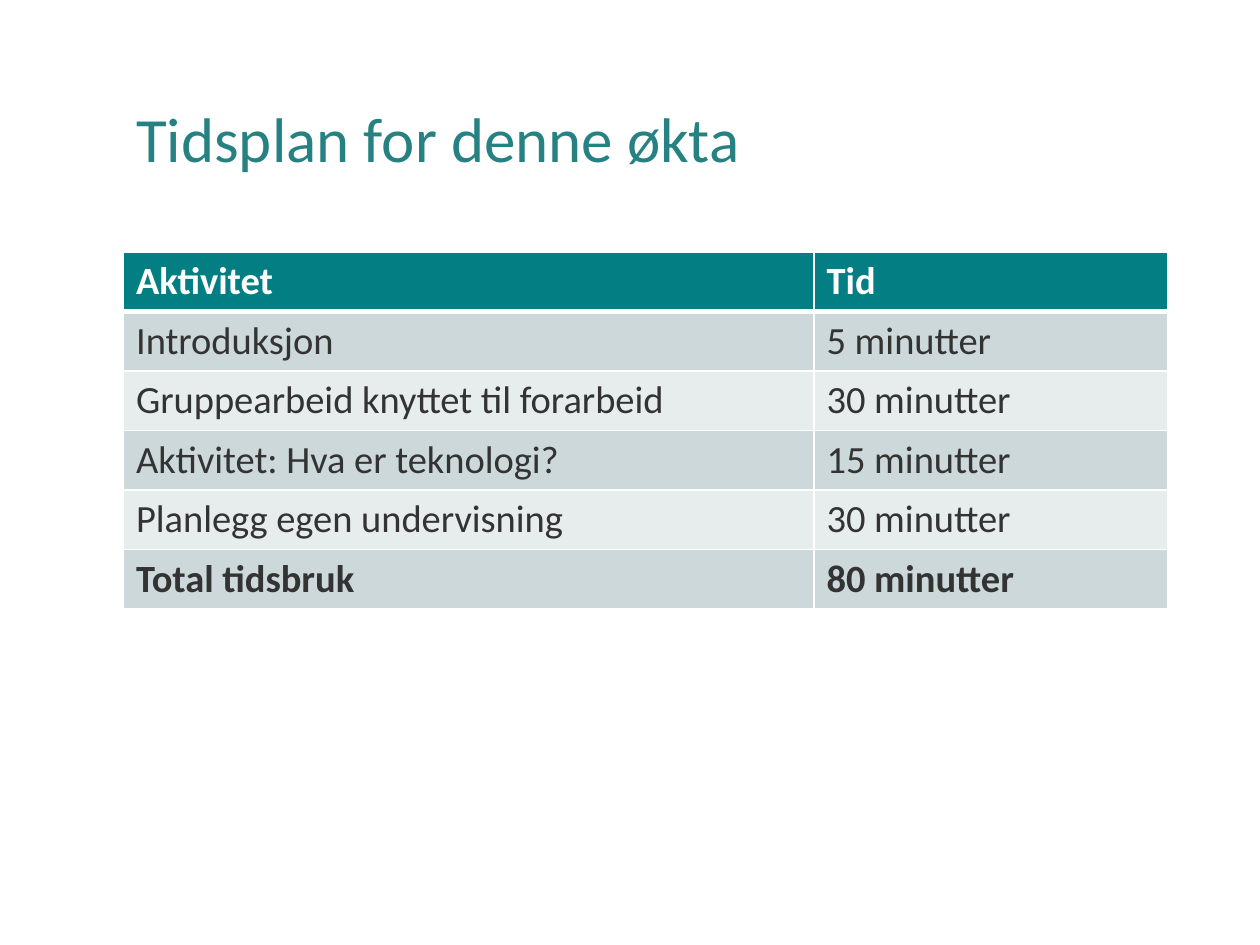
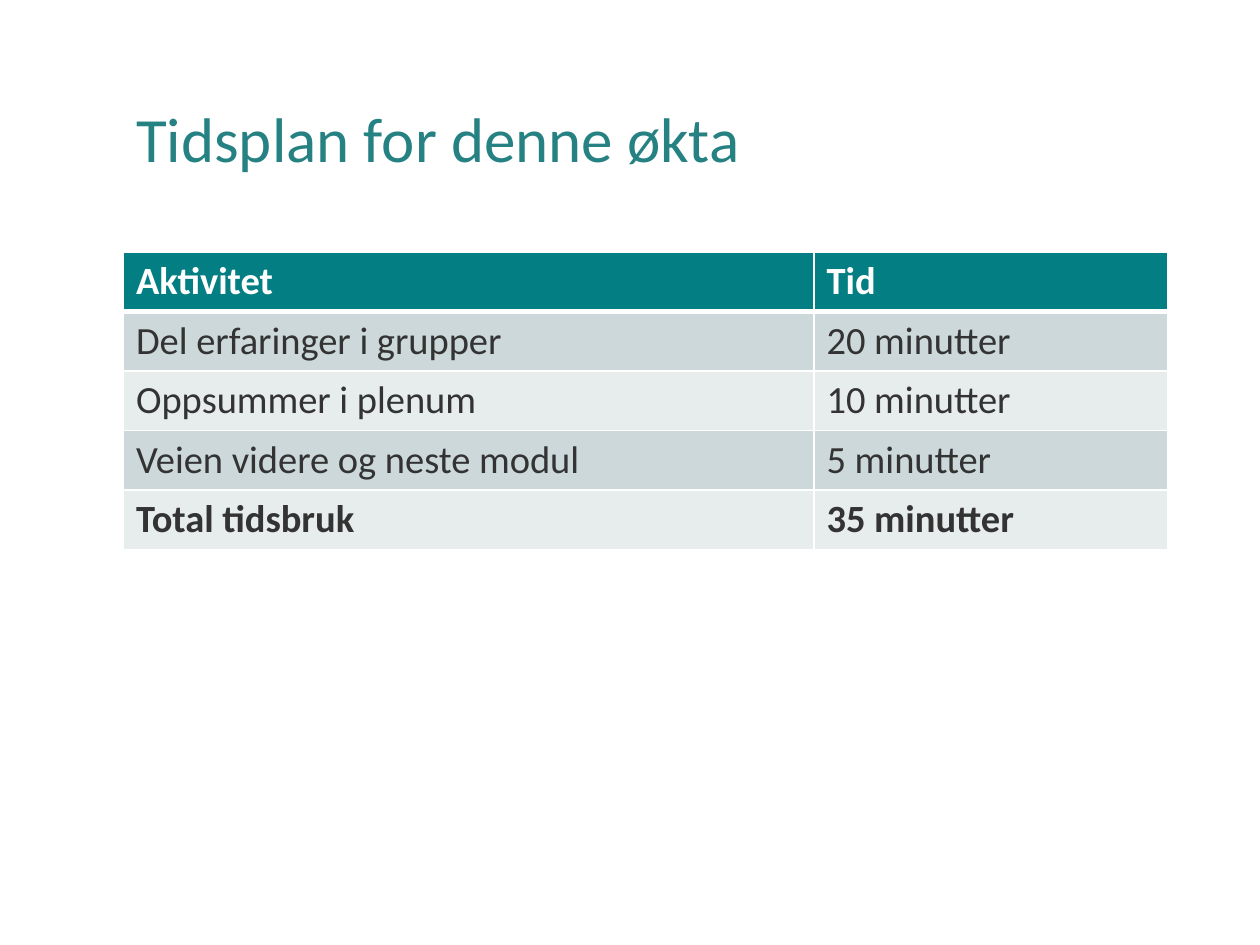
from lxml.etree import SubElement
from pptx import Presentation
from pptx.dml.color import RGBColor
from pptx.enum.text import MSO_ANCHOR, MSO_AUTO_SIZE, PP_ALIGN
from pptx.oxml.ns import qn
from pptx.util import Cm, Pt

# Shared style
COLORS = {
    "title": "268183",
    "header": "037F83",
    "odd_row": "CCD8D9",
    "even_row": "E7ECED",
    "text": "333333",
    "white": "FFFFFF",
}
FONT = "Calibri"
LEFT, WIDTH = Cm(2.49), Cm(21.06)
COL_WIDTHS = Cm(13.92), Cm(7.14)
ROW_HEIGHT = Cm(1.2)
TITLE = "Tidsplan for denne økta"
HEADER = ("Aktivitet", "Tid")

# One schedule per slide; the last row is the total
SCHEDULES = [
    [
        ("Introduksjon", "5 minutter"),
        ("Gruppearbeid knyttet til forarbeid", "30 minutter"),
        ("Aktivitet: Hva er teknologi?", "15 minutter"),
        ("Planlegg egen undervisning", "30 minutter"),
        ("Total tidsbruk", "80 minutter"),
    ],
    [
        ("Del erfaringer i grupper", "20 minutter"),
        ("Oppsummer i plenum", "10 minutter"),
        ("Veien videre og neste modul", "5 minutter"),
        ("Total tidsbruk", "35 minutter"),
    ],
]


def rgb(name):
    return RGBColor.from_string(COLORS[name])


def write_text(tf, text, size=22, color="text", bold=False, line_spacing=1.0):
    p = tf.paragraphs[0]
    p.alignment = PP_ALIGN.LEFT
    p.line_spacing = line_spacing
    r = p.add_run()
    r.text = text
    r.font.name = FONT
    r.font.size = Pt(size)
    r.font.bold = bold
    r.font.color.rgb = rgb(color)


def add_title(s, text):
    sp = s.shapes.title
    sp.left, sp.top, sp.width, sp.height = LEFT, Cm(1.02), WIDTH, Cm(3.68)
    tf = sp.text_frame
    tf.auto_size = MSO_AUTO_SIZE.NONE
    tf.vertical_anchor = MSO_ANCHOR.MIDDLE
    write_text(tf, text, size=36, color="title", line_spacing=0.9)


def set_borders(cell, top=1, bottom=1):
    tc_pr = cell._tc.get_or_add_tcPr()
    for side, width in (("L", 1), ("R", 1), ("T", top), ("B", bottom)):
        ln = SubElement(tc_pr, qn(f"a:ln{side}"), w=str(Pt(width)))
        fill = SubElement(ln, qn("a:solidFill"))
        SubElement(fill, qn("a:srgbClr"), val=COLORS["white"])


def fill_cell(cell, text, fill, top=1, bottom=1, **text_format):
    # Borders must precede the fill in the cell properties
    set_borders(cell, top, bottom)
    cell.fill.solid()
    cell.fill.fore_color.rgb = rgb(fill)
    write_text(cell.text_frame, text, **text_format)


def add_schedule(s, activities):
    rows = [HEADER, *activities]
    frame = s.shapes.add_table(len(rows), len(HEADER), LEFT, Cm(5.08),
                               WIDTH, ROW_HEIGHT * len(rows))
    table = frame.table
    for column, width in zip(table.columns, COL_WIDTHS):
        column.width = width
    for i, row in enumerate(rows):
        table.rows[i].height = ROW_HEIGHT
        if i == 0:
            style = dict(fill="header", color="white", bold=True, bottom=3)
        else:
            style = dict(fill="odd_row" if i % 2 else "even_row",
                         bold=i == len(activities), top=3 if i == 1 else 1)
        for j, text in enumerate(row):
            fill_cell(table.cell(i, j), text, **style)


def main():
    prs = Presentation()
    prs.slide_width, prs.slide_height = Cm(25.4), Cm(19.05)
    title_only = prs.slide_layouts[5]
    for activities in SCHEDULES:
        s = prs.slides.add_slide(title_only)
        add_title(s, TITLE)
        add_schedule(s, activities)
    prs.save("out.pptx")


if __name__ == "__main__":
    main()
